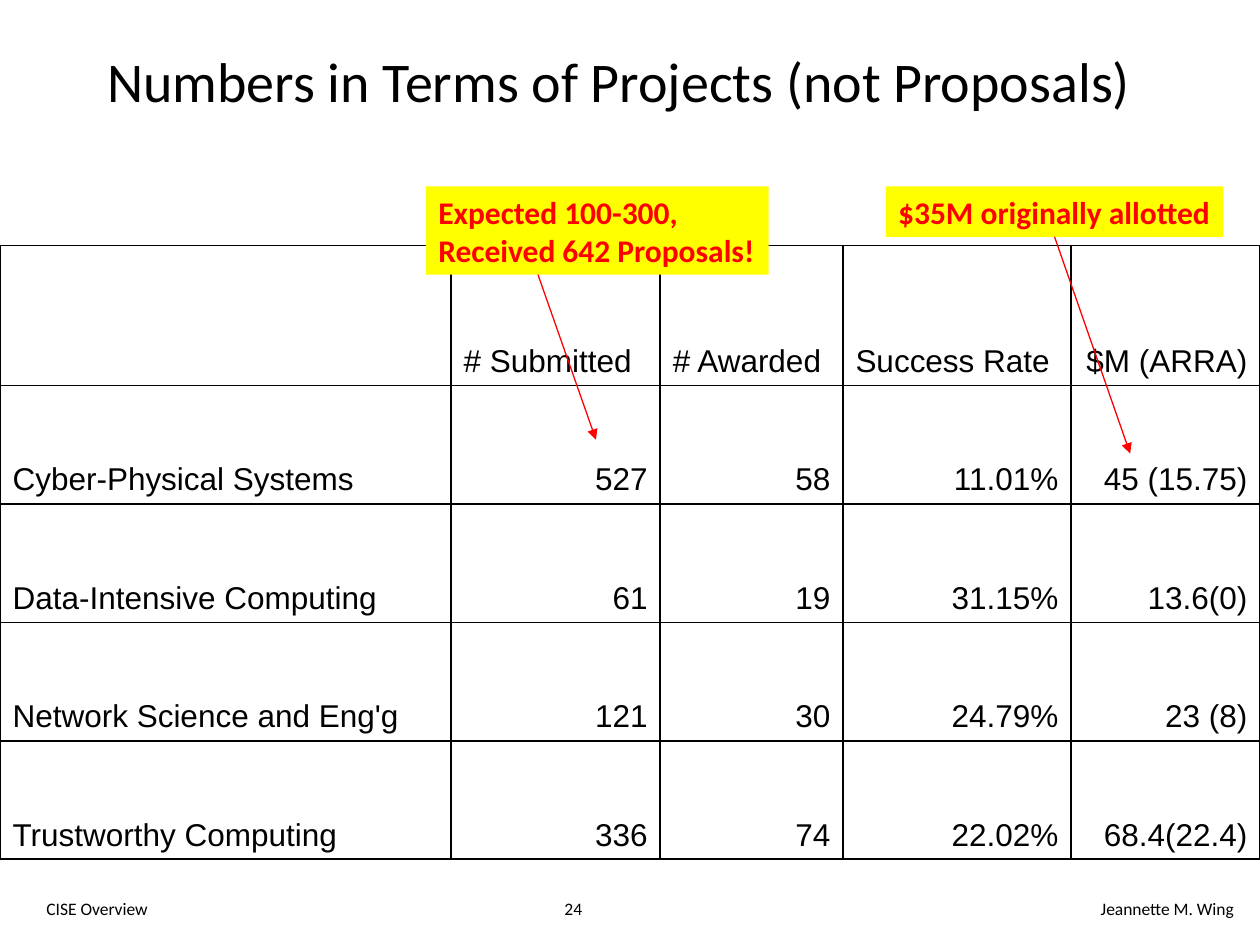
from lxml.etree import SubElement
from pptx import Presentation
from pptx.dml.color import RGBColor
from pptx.enum.shapes import MSO_CONNECTOR, MSO_SHAPE
from pptx.enum.text import MSO_ANCHOR, MSO_AUTO_SIZE, PP_ALIGN
from pptx.oxml.ns import qn
from pptx.util import Inches, Pt

BLACK, RED, YELLOW = "000000", "FF0000", "FFFF00"
COLUMNS = [3.58, 1.66, 1.45, 1.81, 1.5]
ROW_HEIGHTS = [1.11] + [0.94] * 4
ROWS = [
    ["", "# Submitted", "# Awarded", "Success Rate", "$M (ARRA)"],
    ["Cyber-Physical Systems", "527", "58", "11.01%", "45 (15.75)"],
    ["Data-Intensive Computing", "61", "19", "31.15%", "13.6(0)"],
    ["Network Science and Eng'g", "121", "30", "24.79%", "23 (8)"],
    ["Trustworthy Computing", "336", "74", "22.02%", "68.4(22.4)"],
]


def color(value):
    return RGBColor.from_string(value)


def add_run(p, text, size, font="Calibri", fill=BLACK, bold=False):
    r = p.add_run()
    r.text = text
    r.font.name = font
    r.font.size = Pt(size)
    r.font.bold = bold
    r.font.color.rgb = color(fill)


def add_title(s, box, text):
    title = s.shapes.title
    title.left, title.top, title.width, title.height = map(Inches, box)
    tf = title.text_frame
    tf.auto_size = MSO_AUTO_SIZE.NONE
    tf.vertical_anchor = MSO_ANCHOR.MIDDLE
    p = tf.paragraphs[0]
    p.alignment = PP_ALIGN.LEFT
    add_run(p, text, 32)


def add_footer(s, box, text, align):
    tf = s.shapes.add_textbox(*map(Inches, box)).text_frame
    tf.word_wrap = True
    p = tf.paragraphs[0]
    p.alignment = align
    add_run(p, text, 10)


def set_borders(cell):
    tcPr = cell._tc.get_or_add_tcPr()
    for side in ("a:lnL", "a:lnR", "a:lnT", "a:lnB"):
        ln = SubElement(tcPr, qn(side), w=str(Pt(1)))
        fill = SubElement(ln, qn("a:solidFill"))
        SubElement(fill, qn("a:srgbClr"), val=BLACK)


def fill_cell(cell, text, align):
    set_borders(cell)
    cell.fill.background()
    cell.vertical_anchor = MSO_ANCHOR.BOTTOM
    if not text:
        return
    p = cell.text_frame.paragraphs[0]
    p.alignment = align
    pPr = p._p.get_or_add_pPr()
    pPr.set("marL", str(Inches(0.38)))
    pPr.set("indent", str(Inches(-0.38)))
    add_run(p, text, 18, "Arial")


def add_projects_table(s, left, top):
    table = s.shapes.add_table(
        len(ROWS), len(COLUMNS), Inches(left), Inches(top),
        Inches(sum(COLUMNS)), Inches(sum(ROW_HEIGHTS))).table
    table.first_row = table.horz_banding = False
    for column, width in zip(table.columns, COLUMNS):
        column.width = Inches(width)
    for row, height in zip(table.rows, ROW_HEIGHTS):
        row.height = Inches(height)
    last = len(COLUMNS) - 1
    for i, values in enumerate(ROWS):
        for j, text in enumerate(values):
            right = j == last or (i > 0 and j > 0)
            align = PP_ALIGN.RIGHT if right else PP_ALIGN.LEFT
            fill_cell(table.cell(i, j), text, align)


def add_callout(s, box, lines):
    sp = s.shapes.add_shape(MSO_SHAPE.RECTANGLE, *map(Inches, box))
    sp.shadow.inherit = False
    sp.fill.solid()
    sp.fill.fore_color.rgb = color(YELLOW)
    sp.line.fill.background()
    tf = sp.text_frame
    tf.word_wrap = False
    tf.auto_size = MSO_AUTO_SIZE.SHAPE_TO_FIT_TEXT
    p = tf.paragraphs[0]
    p.alignment = PP_ALIGN.LEFT
    for i, line in enumerate(lines):
        if i:
            p.add_line_break()
        add_run(p, line, 18, fill=RED, bold=True)
    return sp


def add_arrow(s, start, end):
    arrow = s.shapes.add_connector(
        MSO_CONNECTOR.STRAIGHT, *map(Inches, start + end))
    arrow.line.color.rgb = color(RED)
    arrow.line.width = Pt(0.75)
    SubElement(arrow.line._get_or_add_ln(), qn("a:tailEnd"), type="triangle")
    SubElement(arrow._element.spPr, qn("a:effectLst"))
    return arrow


def main():
    prs = Presentation()
    prs.slide_width, prs.slide_height = Inches(10), Inches(7.5)
    s = prs.slides.add_slide(prs.slide_layouts[5])

    add_footer(s, (3.51, 7.08, 2.08, 0.33), "24", PP_ALIGN.CENTER)
    add_footer(s, (0.27, 7.08, 2.08, 0.33), "CISE Overview", PP_ALIGN.LEFT)
    add_footer(s, (6.91, 7.08, 2.98, 0.33), "Jeannette M. Wing", PP_ALIGN.RIGHT)
    add_title(s, (0.75, 0.26, 8.5, 0.75),
              "Numbers in Terms of Projects (not Proposals)")
    add_projects_table(s, 0, 1.95)

    add_callout(s, (3.38, 1.48, 2.72, 0.7),
                ["Expected 100-300,", "Received 642 Proposals!"])
    add_arrow(s, (4.27, 2.18), (4.73, 3.49))
    allotted = add_callout(s, (7.03, 1.48, 2.68, 0.4),
                           ["$35M originally allotted"])
    add_arrow(s, (8.37, 1.88), (8.97, 3.6)).begin_connect(allotted, 2)

    prs.save("out.pptx")


if __name__ == "__main__":
    main()
